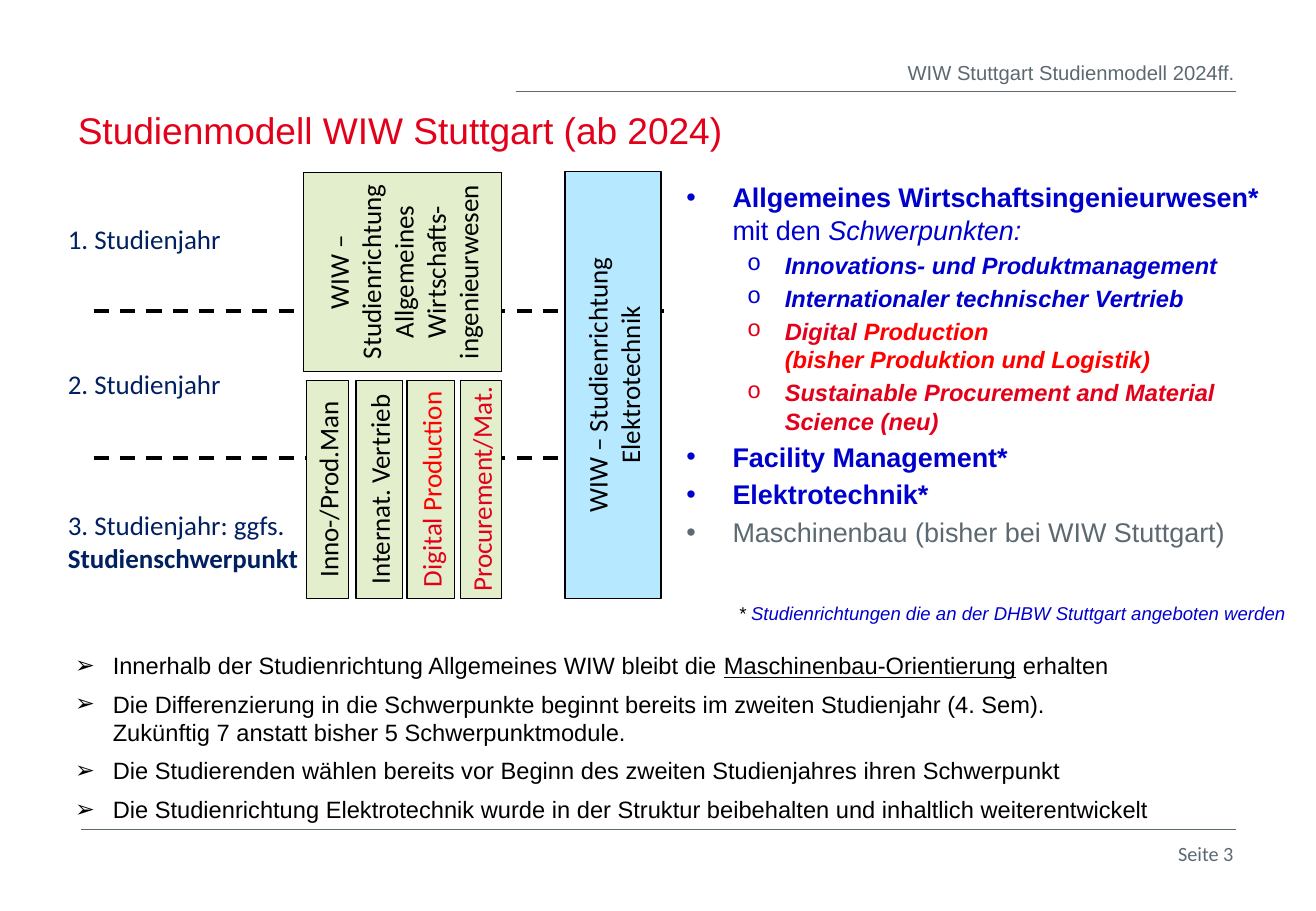
from copy import deepcopy
from dataclasses import dataclass

from lxml.etree import SubElement
from pptx import Presentation
from pptx.dml.color import RGBColor
from pptx.enum.dml import MSO_LINE
from pptx.enum.shapes import MSO_CONNECTOR as Connector, MSO_SHAPE as Preset
from pptx.enum.text import MSO_ANCHOR as Anchor, PP_ALIGN as Align
from pptx.oxml.ns import qn
from pptx.slide import Slide
from pptx.text.text import TextFrame
from pptx.util import Inches, Pt

COLORS = {"black": "000000", "gray": "5C6971", "red": "E2001A", "bright": "FF0000",
          "blue": "0000CC", "navy": "002060", "green": "E2EECC", "sky": "B6E8FF"}


@dataclass
class Span:
    """A piece of text in one format; a newline is a line break."""
    text: str
    color: str = "black"
    bold: bool = False
    italic: bool = False
    underline: bool = False


@dataclass
class Bullet:
    """A bullet character with its font and indent in inches."""
    char: str
    font: str
    left: float
    hanging: float


@dataclass
class Para:
    """A paragraph of spans."""
    spans: list[Span]
    size: float = 16
    font: str = "Calibri"
    align: Align = Align.LEFT
    bullet: Bullet | None = None
    before: float = 0
    after: float = 0


@dataclass
class TextBlock:
    """A free text area."""
    at: tuple[float, float, float, float]
    paras: list[Para]
    wrap: bool = True


@dataclass
class Module:
    """A filled box with upward text."""
    at: tuple[float, float, float, float]
    spans: list[Span]
    fill: str = "green"
    margin: float = 0


@dataclass
class Rule:
    """A horizontal line."""
    left: float
    right: float
    y: float
    color: str = "gray"
    width: float = 0.25
    dashed: bool = False


MAIN = Bullet("•", "Arial", 0.38, 0.38)
SUB = Bullet("o", "Courier New", 0.81, 0.31)
ARROW = Bullet("➢", "Arial", 0.31, 0.31)


def direction(*spans: Span, before: float = 3.2) -> Para:
    """Return a top-level entry of the list of study directions."""
    return Para(list(spans), font="Arial", bullet=MAIN, before=before)


def focus(*parts: tuple[str, str]) -> Para:
    """Return a focus entry from text and color pairs."""
    return Para([Span(text, color, True, True) for text, color in parts],
                14, "Arial", bullet=SUB, before=2.8)


def remark(*spans: Span) -> Para:
    """Return an entry of the closing remarks."""
    return Para(list(spans), 14, "Arial", bullet=ARROW, after=6)


def year(top: float, height: float, width: float, *spans: Span) -> TextBlock:
    """Return the label of a study year."""
    return TextBlock((0.46, top, width, height), [Para(list(spans))], wrap=False)


RULES = [
    Rule(4.25, 10.17, 0.75),
    Rule(0.67, 10.17, 6.83),
    Rule(0.77, 5.51, 2.56, "black", 2.25, True),
    Rule(0.77, 5.32, 3.77, "black", 2.25, True),
]
FOCUS_TOP, FOCUS_HEIGHT = 3.13, 1.8
FOCUS_COLUMNS = [
    (2.52, 0.35, [Span("Inno-/Prod.Man")]),
    (2.93, 0.38, [Span("Internat. Vertrieb")]),
    (3.35, 0.39, [Span("Digital ", "red"), Span("Production", "bright")]),
    (3.79, 0.34, [Span("Procurement/Mat.", "red")]),
]
MODULES = [
    Module((2.5, 1.42, 1.63, 1.64),
           [Span("WIW – Studienrichtung\nAllgemeines Wirtschafts-ingenieurwesen")]),
    Module((4.65, 1.41, 0.79, 3.52),
           [Span("WIW – Studienrichtung Elektrotechnik")], "sky", 0.1),
] + [Module((left, FOCUS_TOP, width, FOCUS_HEIGHT), spans)
     for left, width, spans in FOCUS_COLUMNS]
TITLE = Para([Span("Studienmodell WIW Stuttgart (ab 2024)", "red")], 22, "Arial")
BLOCKS = [
    TextBlock((6.93, 0.45, 3.33, 0.5), [
        Para([Span("WIW Stuttgart Studienmodell 2024ff.", "gray")], 12, "Arial", Align.RIGHT)]),
    TextBlock((9.25, 6.88, 1, 0.5), [
        Para([Span("Seite 3", "gray")], 12, align=Align.RIGHT)]),
    year(1.78, 0.37, 1.47, Span("1. Studienjahr", "navy")),
    year(2.98, 0.37, 1.47, Span("2. Studienjahr", "navy")),
    year(4.14, 0.64, 2.12, Span("3. Studienjahr: ggfs. \n", "navy"),
         Span("Studienschwerpunkt", "navy", True)),
    TextBlock((5.55, 1.44, 5.28, 2.82), [
        direction(Span("Allgemeines Wirtschaftsingenieurwesen*\n", "blue", True),
                  Span("mit den ", "blue"),
                  Span("Schwerpunkten:", "blue", italic=True), before=0),
        focus(("Innovations- und Produktmanagement", "blue")),
        focus(("Internationaler technischer Vertrieb", "blue")),
        focus(("Digital ", "red"), ("Production \n(bisher Produktion und Logistik)", "bright")),
        focus(("Sustainable Procurement and Material Science (neu)", "red")),
        direction(Span("Facility Management*", "blue", True)),
        direction(Span("Elektrotechnik*", "blue", True)),
        direction(Span("Maschinenbau (bisher bei WIW Stuttgart)", "gray"))]),
    TextBlock((5.98, 4.91, 4.73, 0.29), [
        Para([Span("* ", italic=True),
              Span("Studienrichtungen die an der DHBW Stuttgart angeboten werden",
                   "blue", italic=True)], 11, "Arial")], wrap=False),
    TextBlock((0.52, 5.31, 10.07, 1.53), [
        remark(Span("Innerhalb der Studienrichtung Allgemeines WIW bleibt die "),
               Span("Maschinenbau-Orientierung", underline=True), Span(" erhalten")),
        remark(Span("Die Differenzierung in die Schwerpunkte beginnt bereits im zweiten "
                    "Studienjahr (4. Sem).\nZukünftig 7 anstatt bisher 5 Schwerpunktmodule.")),
        remark(Span("Die Studierenden wählen bereits vor Beginn des zweiten Studienjahres "
                    "ihren Schwerpunkt")),
        remark(Span("Die Studienrichtung Elektrotechnik wurde in der Struktur beibehalten "
                    "und inhaltlich weiterentwickelt"))]),
]


def rgb(name: str) -> RGBColor:
    """Return a named color."""
    return RGBColor.from_string(COLORS[name])


def write(frame: TextFrame, paras: list[Para]) -> None:
    """Fill a text frame with formatted paragraphs."""
    for index, para in enumerate(paras):
        paragraph = frame.add_paragraph() if index else frame.paragraphs[0]
        paragraph.alignment = para.align
        paragraph.space_before, paragraph.space_after = Pt(para.before), Pt(para.after)
        if para.bullet:
            props = paragraph._p.get_or_add_pPr()
            props.set("marL", str(Inches(para.bullet.left)))
            props.set("indent", str(-Inches(para.bullet.hanging)))
            SubElement(props, qn("a:buFont"), typeface=para.bullet.font)
            SubElement(props, qn("a:buChar"), char=para.bullet.char)
        for span in para.spans:
            for number, line in enumerate(span.text.split("\n")):
                if number:
                    paragraph.add_line_break()
                    paragraph._p[-1].append(deepcopy(run._r.rPr))
                if line:
                    run = paragraph.add_run()
                    run.text = line
                    font = run.font
                    font.name, font.size = para.font, Pt(para.size)
                    font.bold, font.italic = span.bold, span.italic
                    font.underline = span.underline
                    font.color.rgb = rgb(span.color)


def draw_rule(slide: Slide, rule: Rule) -> None:
    """Draw a horizontal line."""
    line = slide.shapes.add_connector(Connector.STRAIGHT, Inches(rule.left), Inches(rule.y),
                                      Inches(rule.right), Inches(rule.y))
    line.line.color.rgb, line.line.width = rgb(rule.color), Pt(rule.width)
    if rule.dashed:
        line.line.dash_style = MSO_LINE.DASH
    SubElement(line._element.spPr, qn("a:effectLst"))


def draw_module(slide: Slide, module: Module) -> None:
    """Draw a filled box with upward text."""
    box = slide.shapes.add_shape(Preset.RECTANGLE, *map(Inches, module.at))
    box.shadow.inherit = False
    box.fill.solid()
    box.fill.fore_color.rgb = rgb(module.fill)
    box.line.color.rgb, box.line.width = rgb("black"), Pt(0.75)
    frame = box.text_frame
    frame.word_wrap, frame.vertical_anchor = True, Anchor.MIDDLE
    frame.margin_left = frame.margin_right = Inches(module.margin)
    frame.margin_top = frame.margin_bottom = Inches(module.margin)
    frame._txBody.bodyPr.set("vert", "vert270")
    write(frame, [Para(module.spans, align=Align.CENTER)])


def draw_block(slide: Slide, block: TextBlock) -> None:
    """Draw a free text area."""
    frame = slide.shapes.add_textbox(*map(Inches, block.at)).text_frame
    frame.word_wrap = block.wrap
    write(frame, block.paras)


def main() -> None:
    """Build and save the slide."""
    deck = Presentation()
    deck.slide_width, deck.slide_height = Inches(10.83), Inches(7.5)
    slide = deck.slides.add_slide(deck.slide_layouts[5])
    title = slide.shapes.title
    title.left, title.top, title.width, title.height = map(Inches, (0.54, 0.3, 7.79, 1))
    title.text_frame.vertical_anchor = Anchor.BOTTOM
    write(title.text_frame, [TITLE])
    for rule in RULES:
        draw_rule(slide, rule)
    for module in MODULES:
        draw_module(slide, module)
    for block in BLOCKS:
        draw_block(slide, block)
    deck.save("out.pptx")


if __name__ == "__main__":
    main()
